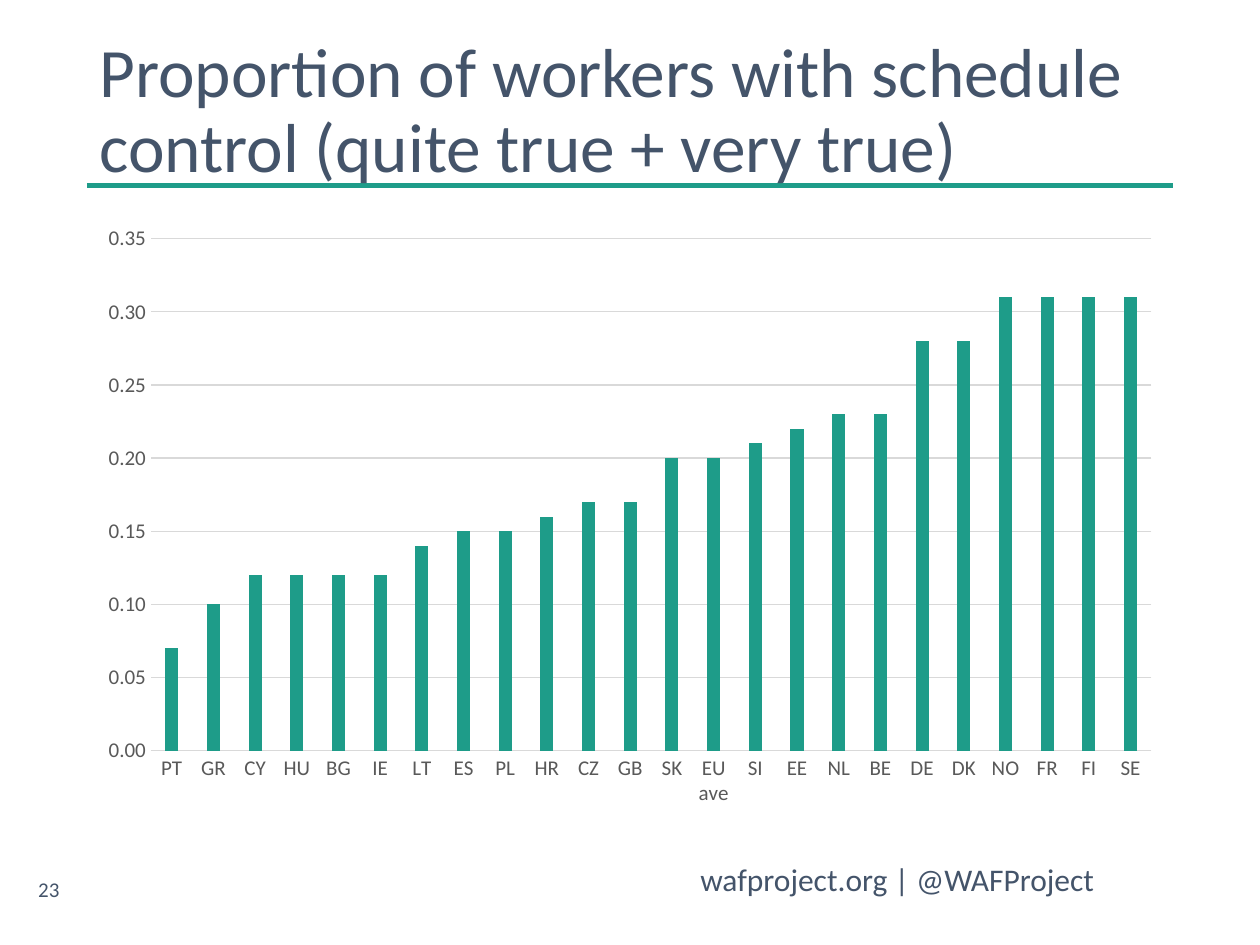
"""Build the slide on workers with schedule control, by country."""
from lxml.etree import SubElement
from pptx import Presentation
from pptx.chart.data import CategoryChartData
from pptx.dml.color import RGBColor
from pptx.enum.chart import XL_CHART_TYPE, XL_TICK_MARK
from pptx.enum.shapes import MSO_CONNECTOR
from pptx.enum.text import MSO_ANCHOR, PP_ALIGN
from pptx.oxml.ns import qn
from pptx.util import Inches, Pt

TITLE = "Proportion of workers with schedule control (quite true + very true)"
FOOT = "wafproject.org | @WAFProject"
PAGE = "23"
RATES = [
    ("PT", 0.07), ("GR", 0.1), ("CY", 0.12), ("HU", 0.12), ("BG", 0.12), ("IE", 0.12),
    ("LT", 0.14), ("ES", 0.15), ("PL", 0.15), ("HR", 0.16), ("CZ", 0.17), ("GB", 0.17),
    ("SK", 0.2), ("EU ave", 0.2), ("SI", 0.21), ("EE", 0.22), ("NL", 0.23), ("BE", 0.23),
    ("DE", 0.28), ("DK", 0.28), ("NO", 0.31), ("FR", 0.31), ("FI", 0.31), ("SE", 0.31),
]
FONT, NAVY, TEAL, GREY, PALE = "Calibri", "44546A", "1E9C89", "595959", "D9D9D9"
LEFT, WIDTH = 0.69, 8.62


def paint(color, code):
    color.rgb = RGBColor.from_string(code)


def style(font, size, code):
    font.name, font.size = FONT, Pt(size)
    paint(font.color, code)


def stroke(line, code, width):
    paint(line.fill.fore_color, code) if line.fill.type else paint(line.color, code)
    line.width = Pt(width)


def write(slide, text, box, size, anchor=MSO_ANCHOR.TOP, align=PP_ALIGN.LEFT, space=1.0):
    frame = slide.shapes.add_textbox(*map(Inches, box)).text_frame
    frame.word_wrap, frame.vertical_anchor = True, anchor
    para = frame.paragraphs[0]
    para.alignment, para.line_spacing = align, space
    run = para.add_run()
    run.text = text
    style(run.font, size, NAVY)


def rule(slide, top):
    ends = map(Inches, (LEFT, top, LEFT + WIDTH, top))
    line = slide.shapes.add_connector(MSO_CONNECTOR.STRAIGHT, *ends)
    stroke(line.line, TEAL, 3)
    SubElement(line._element.spPr, qn("a:effectLst"))


def plot(slide, top, height):
    names, rates = zip(*RATES)
    data = CategoryChartData(number_format="0.00")
    data.categories = names
    data.add_series("Series 1", rates)
    box = map(Inches, (LEFT, top, WIDTH, height))
    chart = slide.shapes.add_chart(XL_CHART_TYPE.COLUMN_CLUSTERED, *box, data).chart
    chart.has_legend = chart.has_title = False
    style(chart.font, 10, "000000")
    bars = chart.plots[0]
    bars.gap_width, bars.overlap, bars.vary_by_categories = 219, -27, False
    fill = bars.series[0].format.fill
    fill.solid()
    paint(fill.fore_color, TEAL)
    cats, vals = chart.category_axis, chart.value_axis
    for axis in (cats, vals):
        axis.major_tick_mark = axis.minor_tick_mark = XL_TICK_MARK.NONE
        style(axis.tick_labels.font, 12, GREY)
    vals.minimum_scale, vals.maximum_scale, vals.major_unit = 0, 0.35, 0.05
    vals.tick_labels.number_format = "0.00"
    vals.tick_labels.number_format_is_linked = False
    vals.format.line.fill.background()
    vals.has_major_gridlines = True
    stroke(cats.format.line, PALE, 0.75)
    stroke(vals.major_gridlines.format.line, PALE, 0.75)


def main():
    deck = Presentation()
    deck.slide_width, deck.slide_height = Inches(10), Inches(7.5)
    slide = deck.slides.add_slide(deck.slide_layouts[6])
    write(slide, FOOT, (5.46, 6.78, 4.4, 0.4), 18)
    rule(slide, 1.47)
    write(slide, TITLE, (LEFT, 0.4, WIDTH, 0.98), 39.6, anchor=MSO_ANCHOR.MIDDLE, space=0.9)
    write(slide, PAGE, (0.14, 6.86, 0.43, 0.4), 12, anchor=MSO_ANCHOR.MIDDLE, align=PP_ALIGN.RIGHT)
    plot(slide, 1.7, 4.79)
    deck.save("out.pptx")


if __name__ == "__main__":
    main()
